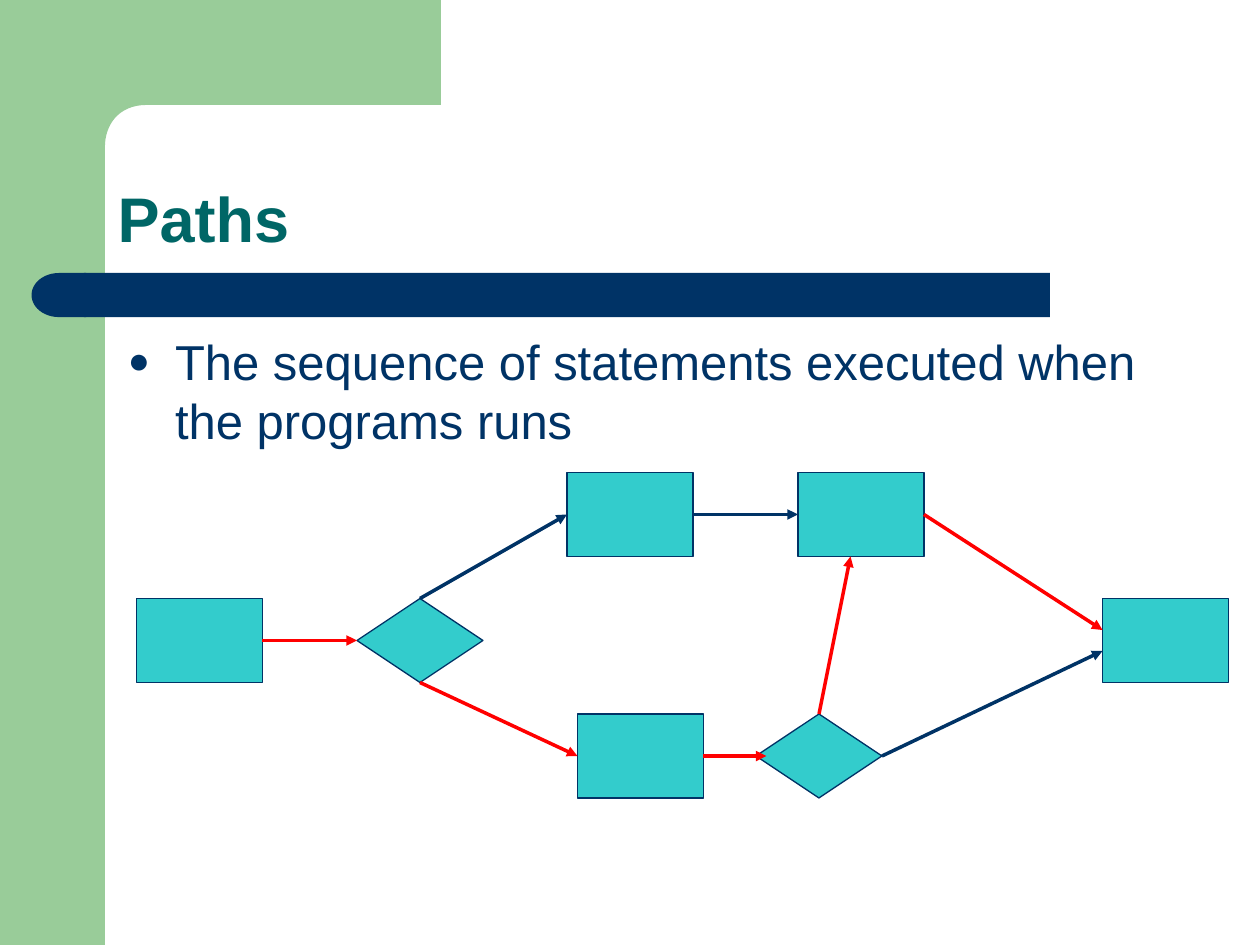
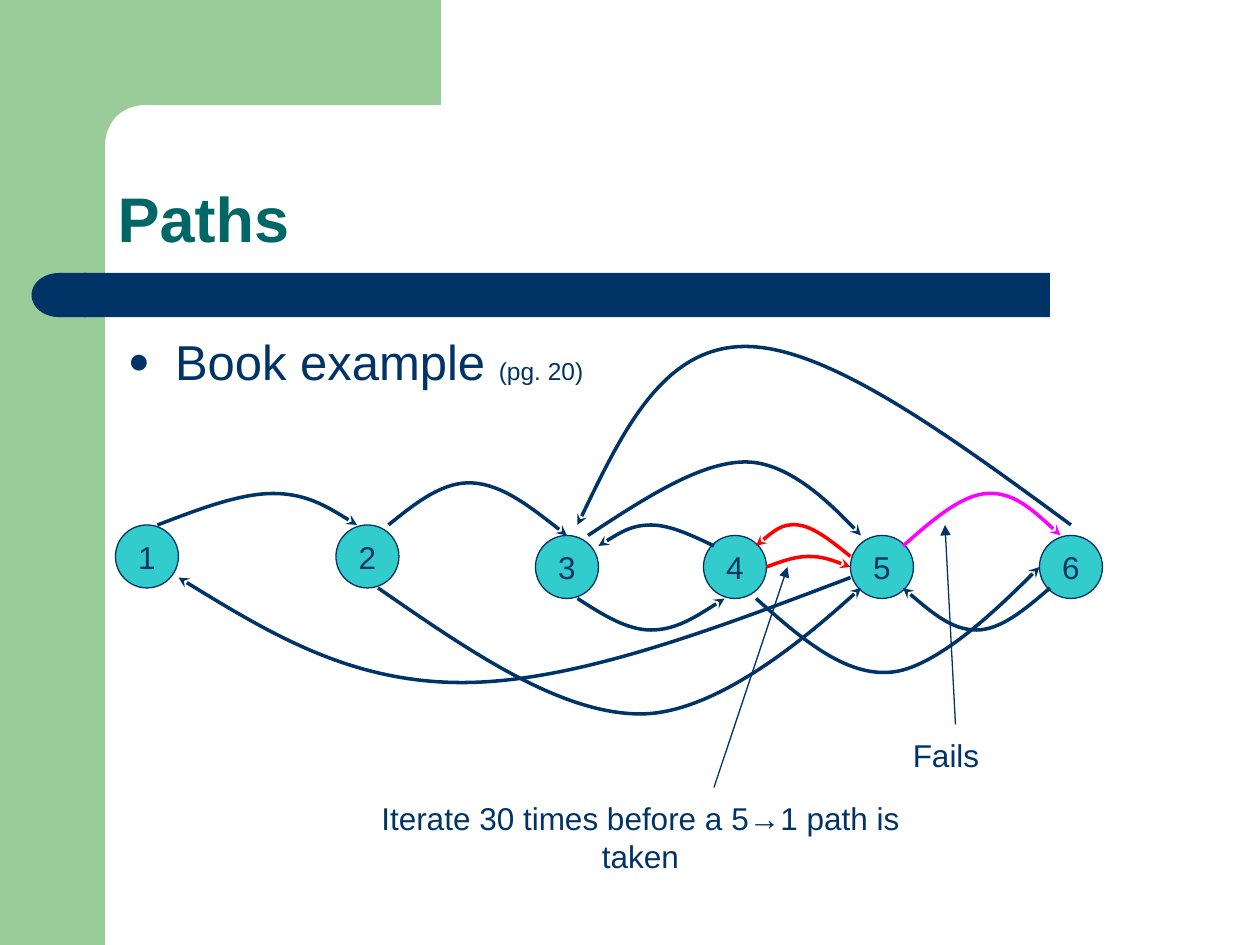
"""Build two slides on program paths: a flow graph and a book example."""
from dataclasses import dataclass

from lxml.etree import SubElement
from pptx import Presentation
from pptx.dml.color import RGBColor as Rgb
from pptx.enum.shapes import MSO_CONNECTOR as Wire, MSO_SHAPE as Kind
from pptx.enum.text import MSO_ANCHOR as Anchor, MSO_AUTO_SIZE as Fit, PP_ALIGN as Align
from pptx.oxml.ns import qn
from pptx.util import Cm, Pt


@dataclass(frozen=True)
class Theme:
    """Colours, font and type sizes."""
    green: str = "99CC99"
    navy: str = "003366"
    teal: str = "006666"
    aqua: str = "33CCCC"
    red: str = "FF0000"
    pink: str = "FF00FF"
    font: str = "Arial"
    head: int = 36
    body: int = 28
    label: int = 18
    small: int = 14
    thin: float = 0.75
    thick: float = 2


LOOK = Theme()
UNIT = 2.54 / 12
TITLE = "Paths"
TOP, LEFT, BOTTOM, RIGHT = range(4)

FLOW_TEXT = [("The sequence of statements executed when the programs runs", LOOK.body)]
BOX, GEM = Kind.FLOWCHART_PROCESS, Kind.FLOWCHART_DECISION
STEPS = {
    "start": (BOX, 13, 57),
    "fork": (GEM, 34, 57),
    "upper": (BOX, 54, 45),
    "merge": (BOX, 76, 45),
    "end": (BOX, 105, 57),
    "lower": (BOX, 55, 68),
    "gate": (GEM, 72, 68),
}
FLOWS = [
    ("start", RIGHT, "fork", LEFT, LOOK.red),
    ("fork", TOP, "upper", LEFT, LOOK.navy),
    ("fork", BOTTOM, "lower", LEFT, LOOK.red),
    ("upper", RIGHT, "merge", LEFT, LOOK.navy),
    ("merge", RIGHT, (105, 60), None, LOOK.red),
    ("lower", RIGHT, (73, 72), None, LOOK.red),
    ("gate", TOP, (81, 53), None, LOOK.red),
    ("gate", RIGHT, (105, 62), None, LOOK.navy),
]

BOOK_TEXT = [("Book example ", LOOK.body), ("(pg. 20)", LOOK.small)]
NODES = [(11, 50), (32, 50), (51, 51), (67, 51), (81, 51), (99, 51)]
EVEN, STEEP = 0.5, 0.8
ARCS = [
    ((15, 50), (26, 47), (34, 50), LOOK.navy, EVEN),
    ((37, 50), (45, 46), (54, 51), LOOK.navy, EVEN),
    ((36, 56), (61, 68), (82, 56), LOOK.navy, STEEP),
    ((56, 51), (71, 44), (82, 51), LOOK.navy, STEEP),
    ((55, 57), (62, 60), (69, 57), LOOK.navy, EVEN),
    ((86, 52), (94, 47), (101, 51), LOOK.pink, EVEN),
    ((100, 56), (93, 60), (86, 56), LOOK.navy, EVEN),
    ((81, 53), (76, 50), (72, 52), LOOK.red, EVEN),
    ((81, 55), (44, 65), (17, 55), LOOK.navy, EVEN),
    ((102, 50), (71, 33), (55, 50), LOOK.navy, EVEN),
    ((68, 52), (62, 50), (57, 52), LOOK.navy, EVEN),
    ((73, 54), (77, 53), (81, 54), LOOK.red, EVEN),
    ((72, 57), (85, 64), (99, 54), LOOK.navy, STEEP),
]
NOTES = [
    ("Iterate 30 times before a 5→1 path is taken", (34, 75.5, 54, 4.8), (68, 75), (75, 54)),
    ("Fails", (85.7, 69.5, 8.8, 4.8), (91, 69), (90, 50)),
]


def at(*spots):
    """Turn grid units into lengths."""
    return [Cm(spot * UNIT) for spot in spots]


def paint(shape, fill=None, line=None, width=LOOK.thin):
    """Set the fill and line of a shape and drop its shadow."""
    shape.shadow.inherit = False
    if fill:
        shape.fill.solid()
        shape.fill.fore_color.rgb = Rgb.from_string(fill)
    else:
        shape.fill.background()
    if line:
        shape.line.color.rgb = Rgb.from_string(line)
        shape.line.width = Pt(width)
    else:
        shape.line.fill.background()
    return shape


def write(frame, runs, align=Align.LEFT, color=LOOK.navy, bold=False):
    """Fill the first paragraph of a frame with sized runs."""
    para = frame.paragraphs[0]
    para.alignment = align
    for text, size in runs:
        run = para.add_run()
        run.text = text
        font = run.font
        font.name, font.size, font.bold = LOOK.font, Pt(size), bold
        font.color.rgb = Rgb.from_string(color)
    return para


def trace(shapes, start, *steps):
    """Draw an outline; a step is one line point or three curve points."""
    pen = shapes.build_freeform(*at(*start))
    pen.add_line_segments([at(*spot) for step in steps for spot in step], close=False)
    shape = pen.convert_to_shape()
    track = next(shape.element.iter(qn("a:path")))
    marks = iter(track.findall(qn("a:lnTo")))
    for step in steps:
        group = [next(marks) for _ in step]
        if len(group) == 1:
            track.append(group[0])
            continue
        curve = SubElement(track, qn("a:cubicBezTo"))
        for mark in group:
            curve.append(mark[0])
            track.remove(mark)
    return shape


def point(shape, kind):
    """Put an arrowhead at the end of a line."""
    SubElement(shape.line._get_or_add_ln(), qn("a:tailEnd"), type=kind)


def arrow(shapes, start, end, color, width):
    """Draw a straight arrow between two grid points."""
    wire = shapes.add_connector(Wire.STRAIGHT, *at(*start, *end))
    wire.line.color.rgb = Rgb.from_string(color)
    wire.line.width = Pt(width)
    point(wire, "triangle")
    SubElement(wire.element.spPr, qn("a:effectLst"))
    return wire


def arc(shapes, start, peak, end, color, ease):
    """Draw a smooth arrow from start over peak to end."""
    slope = [(b - a) / 6 for a, b in zip(start, end)]
    enter = [p - s for p, s in zip(peak, slope)]
    leave = [p + s for p, s in zip(peak, slope)]
    first = [(a + b) / 2 for a, b in zip(start, enter)]
    last = [a + (b - a) * ease for a, b in zip(leave, end)]
    shape = trace(shapes, start, (first, enter, peak), (leave, last, end))
    point(paint(shape, None, color, LOOK.thick), "stealth")


def frame_up(slide):
    """Draw the shared bands and set them into the layout."""
    shapes = slide.shapes
    side = shapes.add_shape(Kind.RECTANGLE, *at(0, 0, 10, 90))
    bend = ((11.2, 10), (10, 12), (10, 14))
    corner = trace(shapes, (42, 0), [(42, 10)], [(14, 10)], bend,
                   [(10, 15.4)], [(6, 15.4)], [(6, 0)], [(42, 0)])
    bar = shapes.add_shape(Kind.RECTANGLE, *at(8, 26, 92, 4.2))
    cap = shapes.add_shape(Kind.FLOWCHART_DELAY, *at(3, 26, 5.2, 4.2))
    cap.rotation = 180
    tree = slide.slide_layout.placeholders[0].element.getparent()
    fills = (LOOK.green, LOOK.green, LOOK.navy, LOOK.navy)
    for spot, (part, fill) in enumerate(zip((side, corner, bar, cap), fills), 2):
        tree.insert(spot, paint(part, fill).element)


def begin(deck, runs):
    """Add a slide with its title and bullet."""
    slide = deck.slides.add_slide(deck.slide_layouts[5])
    title = slide.shapes.title
    title.left, title.top, title.width, title.height = at(10, 10, 104, 15)
    frame = title.text_frame
    frame.auto_size, frame.vertical_anchor = Fit.NONE, Anchor.BOTTOM
    write(frame, [(TITLE, LOOK.head)], color=LOOK.teal, bold=True).line_spacing = 0.9

    frame = slide.shapes.add_textbox(*at(11, 31, 101, 48.8)).text_frame
    frame.word_wrap = True
    para = write(frame, runs)
    para.space_before = Pt(3)
    props = para._p.get_or_add_pPr()
    indent = at(4.5)[0]
    props.set("marL", str(indent))
    props.set("indent", str(-indent))
    tint = SubElement(props, qn("a:buClr"))
    SubElement(tint, qn("a:srgbClr"), val=LOOK.navy)
    SubElement(props, qn("a:buSzPct"), val="75000")
    SubElement(props, qn("a:buFont"), typeface=LOOK.font)
    SubElement(props, qn("a:buChar"), char="●")
    return slide


def draw_flow(shapes):
    """Draw the flow graph with its taken path in red."""
    wide, high = 12, 8
    sides = [(wide / 2, 0), (0, high / 2), (wide / 2, high), (wide, high / 2)]
    parts = {}
    for name, (kind, left, top) in STEPS.items():
        shape = shapes.add_shape(kind, *at(left, top, wide, high))
        parts[name] = paint(shape, LOOK.aqua, LOOK.navy)

    def spot(name, side):
        return [a + b for a, b in zip(STEPS[name][1:], sides[side])]

    for head, out, tail, into, color in FLOWS:
        end = tail if into is None else spot(tail, into)
        wire = arrow(shapes, spot(head, out), end, color, LOOK.thick)
        wire.begin_connect(parts[head], out)
        if into is not None:
            wire.end_connect(parts[tail], into)


def draw_book(shapes):
    """Draw the numbered nodes, their arcs and the notes."""
    for number, (left, top) in enumerate(NODES, 1):
        node = shapes.add_shape(Kind.FLOWCHART_CONNECTOR, *at(left, top, 6, 6))
        frame = paint(node, LOOK.aqua, LOOK.navy).text_frame
        frame.word_wrap, frame.vertical_anchor = False, Anchor.MIDDLE
        write(frame, [(str(number), LOOK.label)], Align.CENTER)
    for item in ARCS:
        arc(shapes, *item)
    for text, place, start, end in NOTES:
        frame = shapes.add_textbox(*at(*place)).text_frame
        frame.word_wrap = True
        write(frame, [(text, LOOK.label)], Align.CENTER)
        arrow(shapes, start, end, LOOK.navy, LOOK.thin)


def main():
    """Build and save the deck."""
    deck = Presentation()
    deck.slide_width, deck.slide_height = at(120, 90)
    flow = begin(deck, FLOW_TEXT)
    frame_up(flow)
    draw_flow(flow.shapes)
    draw_book(begin(deck, BOOK_TEXT).shapes)
    deck.save("out.pptx")


if __name__ == "__main__":
    main()
